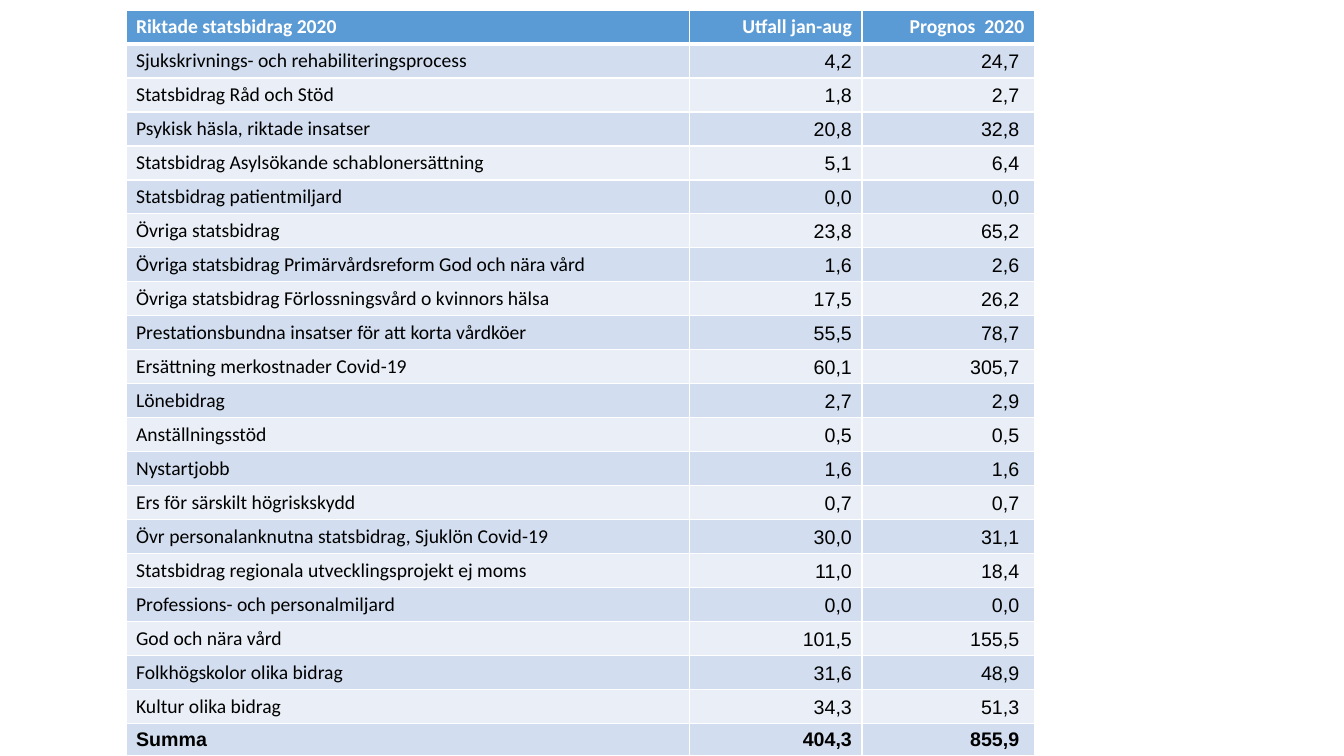
from lxml.etree import SubElement
from pptx import Presentation
from pptx.dml.color import RGBColor
from pptx.enum.text import MSO_ANCHOR, PP_ALIGN
from pptx.oxml.ns import qn
from pptx.util import Inches, Pt

# Content
HEADER = ("Riktade statsbidrag 2020", "Utfall jan-aug", "Prognos  2020")
GRANTS = [
    ("Sjukskrivnings- och rehabiliteringsprocess", "4,2", "24,7"),
    ("Statsbidrag Råd och Stöd", "1,8", "2,7"),
    ("Psykisk häsla, riktade insatser", "20,8", "32,8"),
    ("Statsbidrag Asylsökande schablonersättning", "5,1", "6,4"),
    ("Statsbidrag patientmiljard", "0,0", "0,0"),
    ("Övriga statsbidrag", "23,8", "65,2"),
    ("Övriga statsbidrag Primärvårdsreform God och nära vård", "1,6", "2,6"),
    ("Övriga statsbidrag Förlossningsvård o kvinnors hälsa", "17,5", "26,2"),
    ("Prestationsbundna insatser för att korta vårdköer", "55,5", "78,7"),
    ("Ersättning merkostnader Covid-19", "60,1", "305,7"),
    ("Lönebidrag", "2,7", "2,9"),
    ("Anställningsstöd", "0,5", "0,5"),
    ("Nystartjobb", "1,6", "1,6"),
    ("Ers för särskilt högriskskydd", "0,7", "0,7"),
    ("Övr personalanknutna statsbidrag, Sjuklön Covid-19", "30,0", "31,1"),
    ("Statsbidrag regionala utvecklingsprojekt ej moms", "11,0", "18,4"),
    ("Professions- och personalmiljard", "0,0", "0,0"),
    ("God och nära vård", "101,5", "155,5"),
    ("Folkhögskolor olika bidrag", "31,6", "48,9"),
    ("Kultur olika bidrag", "34,3", "51,3"),
]
TOTAL = ("Summa", "404,3", "855,9")
ROWS = [HEADER, *GRANTS, TOTAL]

# Table grid in inches
LEFT, TOP, HEIGHT = 1.25, 0.1, 7.33
COLS = (5.59, 1.71, 1.71)
BANDS = ("EAEFF7", "D2DEEF")


def rgb(value):
    return RGBColor.from_string(value)


def add_border(cell, side, width, color="FFFFFF"):
    ln = SubElement(cell._tc.get_or_add_tcPr(), qn(f"a:ln{side}"), w=str(Pt(width)))
    SubElement(SubElement(ln, qn("a:solidFill")), qn("a:srgbClr"), val=color)


def write(cell, text, font="Arial", size=14, color="000000", bold=False,
          align=PP_ALIGN.LEFT, anchor=MSO_ANCHOR.BOTTOM):
    cell.vertical_anchor = anchor
    p = cell.text_frame.paragraphs[0]
    p.alignment = align
    r = p.add_run()
    r.text = text
    r.font.name, r.font.size, r.font.bold = font, Pt(size), bold
    r.font.color.rgb = rgb(color)


prs = Presentation()
prs.slide_width, prs.slide_height = Inches(13.33), Inches(7.5)
s = prs.slides.add_slide(prs.slide_layouts[6])

# Table frame
table = s.shapes.add_table(len(ROWS), len(COLS), Inches(LEFT), Inches(TOP),
                           Inches(sum(COLS)), Inches(HEIGHT)).table
for column, width in zip(table.columns, COLS):
    column.width = Inches(width)
for i, row in enumerate(table.rows):
    row.height = Inches(0.32 if i < 2 else 0.31)

# Cells: header, banded grants, bold total
for i, values in enumerate(ROWS):
    head, total = i == 0, values is TOTAL
    for j, text in enumerate(values):
        cell = table.cell(i, j)
        for side in "LRTB":
            thick = (head and side == "B") or (i == 1 and side == "T")
            add_border(cell, side, 3 if thick else 1)
        cell.fill.solid()
        cell.fill.fore_color.rgb = rgb("5B9BD5" if head else BANDS[i % 2])
        if j == 2 and not head:
            cell.margin_right = Inches(0.15)
        write(cell, text,
              font="Calibri" if head or (j == 0 and not total) else "Arial",
              color="FFFFFF" if head else "000000",
              bold=head or total,
              align=PP_ALIGN.RIGHT if j else PP_ALIGN.LEFT,
              anchor=MSO_ANCHOR.TOP if head else MSO_ANCHOR.BOTTOM)

prs.save("out.pptx")
